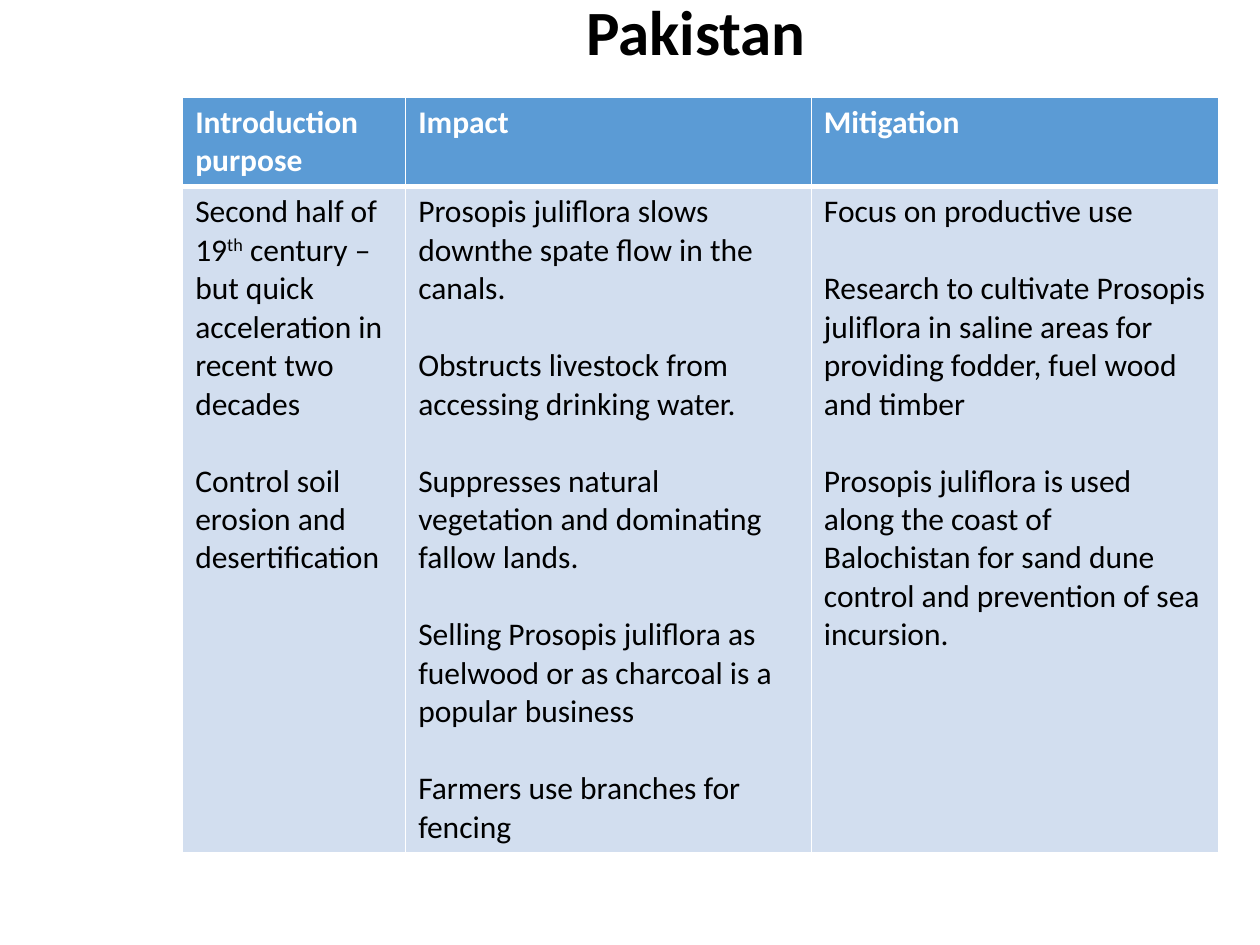
from pptx import Presentation
from pptx.dml.color import RGBColor
from pptx.enum.text import MSO_ANCHOR, MSO_AUTO_SIZE, PP_ALIGN
from pptx.oxml import parse_xml
from pptx.oxml.ns import nsdecls
from pptx.util import Inches, Pt

COLORS = {"header": "5B9BD5", "body": "D2DEEF", "white": "FFFFFF", "black": "000000"}
COL_WIDTHS = [1.77, 3.22, 3.23]
ROW_HEIGHTS = [0.7, 5.2]
PARA_GAP = 22
HEADERS = ["Introduction purpose", "Impact", "Mitigation"]
BODY = [
    [
        ["Second half of 19", ("th", 30000),
         " century – but quick acceleration in recent two decades"],
        ["Control soil erosion and desertification"],
    ],
    [
        ["Prosopis juliflora slows downthe spate flow in the canals."],
        ["Obstructs livestock from accessing drinking water."],
        ["Suppresses natural vegetation and dominating fallow lands."],
        ["Selling Prosopis juliflora as fuelwood or as charcoal is a popular business"],
        ["Farmers use branches for fencing"],
    ],
    [
        ["Focus on productive use"],
        ["Research to cultivate Prosopis juliflora in saline areas for providing "
         "fodder, fuel wood and timber"],
        ["Prosopis juliflora is used along the coast of Balochistan for sand dune "
         "control and prevention of sea incursion."],
    ],
]


def add_run(p, text, size, color, bold, baseline=None):
    """Add a formatted run, raised when a baseline is given."""
    r = p.add_run()
    r.text = text
    for name, value in {"name": "Calibri", "size": Pt(size), "bold": bold}.items():
        setattr(r.font, name, value)
    r.font.color.rgb = RGBColor.from_string(COLORS[color])
    if baseline:
        r.font._element.set("baseline", str(baseline))


def set_borders(cell, widths):
    """Draw white cell borders with the given widths in points."""
    tcPr = cell._tc.get_or_add_tcPr()
    for side, width in widths.items():
        tcPr.append(parse_xml(
            f'<a:ln{side} {nsdecls("a")} w="{Pt(width)}"><a:solidFill>'
            f'<a:srgbClr val="{COLORS["white"]}"/></a:solidFill></a:ln{side}>'))


def fill_cell(cell, paragraphs, fill, color, bold, borders):
    """Style a cell and write its paragraphs."""
    set_borders(cell, borders)
    cell.fill.solid()
    cell.fill.fore_color.rgb = RGBColor.from_string(COLORS[fill])
    tf = cell.text_frame
    for i, parts in enumerate(paragraphs):
        p = tf.add_paragraph() if i else tf.paragraphs[0]
        if i:
            p.space_before = Pt(PARA_GAP)
        for part in parts:
            text, baseline = (part, None) if isinstance(part, str) else part
            add_run(p, text, 18, color, bold, baseline)


def add_title(s, text):
    """Place and format the slide title."""
    sp = s.shapes.title
    box = {"left": 1.37, "top": -0.45, "width": 8.31, "height": 1.45}
    for name, value in box.items():
        setattr(sp, name, Inches(value))
    tf = sp.text_frame
    frame = {"vertical_anchor": MSO_ANCHOR.MIDDLE, "word_wrap": True,
             "auto_size": MSO_AUTO_SIZE.NONE}
    for name, value in frame.items():
        setattr(tf, name, value)
    p = tf.paragraphs[0]
    p.alignment = PP_ALIGN.CENTER
    p.line_spacing = 0.9
    add_run(p, text, 36, "black", True)


def add_country_table(s):
    """Add the table of introduction, impact and mitigation."""
    table = s.shapes.add_table(
        len(ROW_HEIGHTS), len(COL_WIDTHS), Inches(1.45), Inches(0.77),
        Inches(sum(COL_WIDTHS)), Inches(sum(ROW_HEIGHTS))).table
    for col, width in zip(table.columns, COL_WIDTHS):
        col.width = Inches(width)
    for row, height in zip(table.rows, ROW_HEIGHTS):
        row.height = Inches(height)
    for i, (header, paragraphs) in enumerate(zip(HEADERS, BODY)):
        fill_cell(table.cell(0, i), [[header]], "header", "white", True,
                  {"L": 1, "R": 1, "T": 1, "B": 3})
        fill_cell(table.cell(1, i), paragraphs, "body", "black", False,
                  {"L": 1, "R": 1, "T": 3, "B": 1})


def main():
    """Build and save the slide."""
    prs = Presentation()
    prs.slide_width, prs.slide_height = Inches(10), Inches(7.5)
    s = prs.slides.add_slide(prs.slide_layouts[5])
    add_country_table(s)
    add_title(s, "Pakistan")
    prs.save("out.pptx")


if __name__ == "__main__":
    main()
